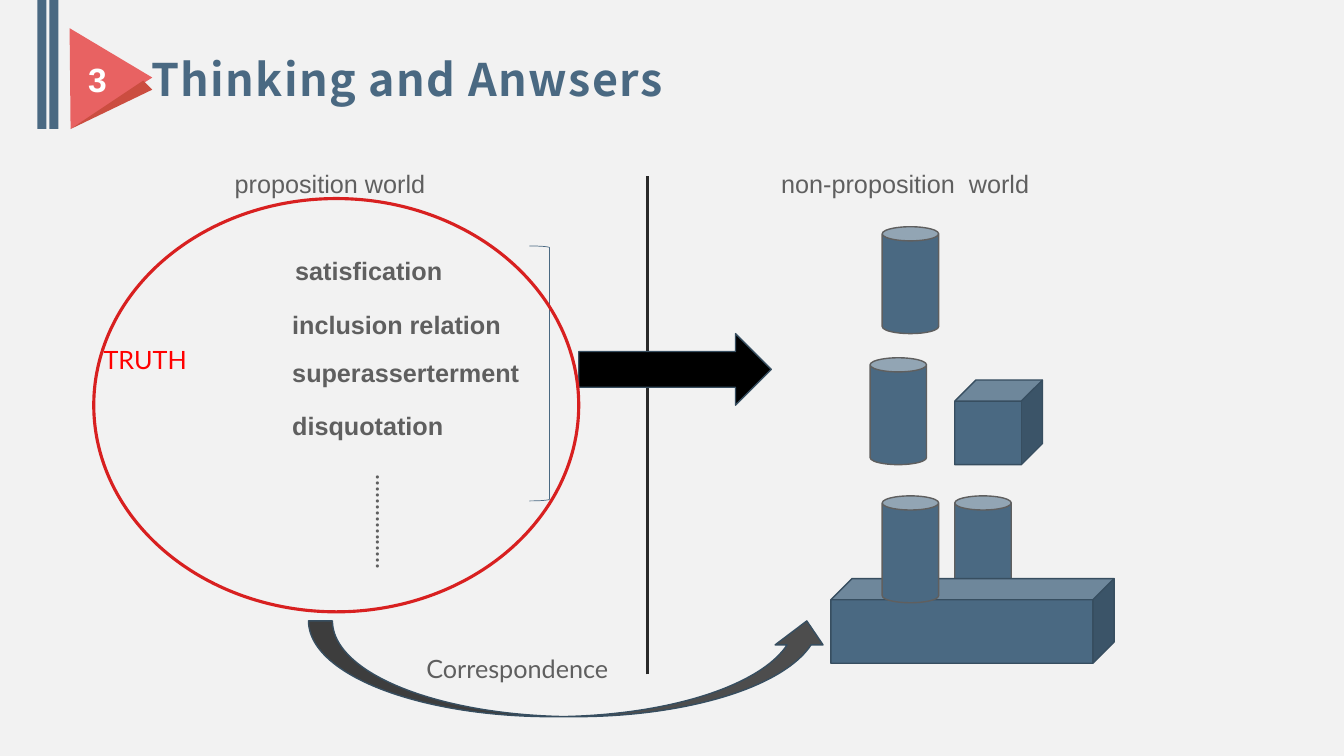
from lxml import etree
from pptx import Presentation
from pptx.dml.color import RGBColor
from pptx.enum.shapes import MSO_CONNECTOR, MSO_SHAPE as SHAPE
from pptx.enum.text import MSO_ANCHOR, MSO_AUTO_SIZE, PP_ALIGN
from pptx.oxml.ns import qn
from pptx.util import Inches, Pt

COLORS = {
    "paper": "F2F2F2", "steel": "4A6982", "edge": "374E60", "gray": "5F5F5F",
    "coral": "E86262", "brick": "CB4D40", "white": "FFFFFF", "black": "000000",
    "red": "FF0000", "ring": "D82020", "divider": "292929", "curve": "4D4D4D",
}
TITLE = "Thinking and Anwsers"
NUMBER = "3"
HEADINGS = [("proposition world", 2.23), ("non-proposition  world", 7.65)]
THEORIES = [
    ("satisfication", 2.83, 2.48, 1.66),
    ("inclusion relation", 2.8, 3.02, 2.27),
    ("superasserterment", 2.8, 3.5, 2.45),
    ("disquotation", 2.8, 4.02, 1.7),
]
BAR_LEFTS = [0.41, 0.53, 0.37, 0.49]
FLAG = [(0.69, 0.28), (1.51, 0.77), (0.7, 1.28)]
FLAG_FOLD = [(1.42, 0.8), (1.51, 0.89), (0.7, 1.28)]
CAN_SIZE = (0.56, 1.06)
OBJECTS = [
    (SHAPE.CAN, 8.75, 2.25, *CAN_SIZE),
    (SHAPE.CAN, 8.63, 3.55, *CAN_SIZE),
    (SHAPE.CAN, 9.47, 4.92, *CAN_SIZE),
    (SHAPE.CUBE, 9.47, 3.77, 0.87, 0.84),
    (SHAPE.CUBE, 8.24, 5.74, 2.81, 0.84),
    (SHAPE.CAN, 8.75, 4.92, *CAN_SIZE),
]

prs = Presentation()
prs.slide_width, prs.slide_height = Inches(13.33), Inches(7.5)
s = prs.slides.add_slide(prs.slide_layouts[6])


def rgb(name):
    return RGBColor.from_string(COLORS[name])


s.background.fill.solid()
s.background.fill.fore_color.rgb = rgb("paper")


def paint(sp, fill=None, line=None, width=1):
    sp.shadow.inherit = False
    if fill:
        sp.fill.solid()
        sp.fill.fore_color.rgb = rgb(fill)
    else:
        sp.fill.background()
    if line:
        sp.line.color.rgb = rgb(line)
        sp.line.width = Pt(width)
    else:
        sp.line.fill.background()
    return sp


def add_shape(kind, x, y, w, h, **look):
    return paint(s.shapes.add_shape(kind, Inches(x), Inches(y), Inches(w), Inches(h)), **look)


def add_polygon(points, fill):
    corners = [(Inches(x), Inches(y)) for x, y in points]
    builder = s.shapes.build_freeform(*corners[0])
    builder.add_line_segments(corners[1:], close=True)
    return paint(builder.convert_to_shape(), fill)


def write(text, tf, size=18, font="Arial", color="gray", bold=False, spacing=None, align=None):
    p = tf.paragraphs[0]
    p.alignment = align
    r = p.add_run()
    r.text = text
    r.font.size, r.font.name, r.font.bold = Pt(size), font, bold
    r.font.color.rgb = rgb(color)
    r_pr = r.font._element
    etree.SubElement(r_pr, qn("a:ea")).set("typeface", font)
    if spacing:
        r_pr.set("spc", str(spacing * 100))


def add_text(text, x, y, w, h=0.4, wrap=True, vertical=False, **style):
    tf = s.shapes.add_textbox(Inches(x), Inches(y), Inches(w), Inches(h)).text_frame
    tf.word_wrap = wrap
    tf.auto_size = MSO_AUTO_SIZE.SHAPE_TO_FIT_TEXT
    if vertical:
        tf._txBody.bodyPr.set("vert", "eaVert")
    write(text, tf, **style)


for left in BAR_LEFTS:
    add_shape(SHAPE.RECTANGLE, left, 0, 0.05, 1.28, fill="steel")

tf = add_polygon(FLAG, "coral").text_frame
tf.vertical_anchor = MSO_ANCHOR.MIDDLE
tf.margin_left, tf.margin_right = Inches(0.04), Inches(0.31)
tf.margin_top = tf.margin_bottom = 0
write(NUMBER, tf, size=24, color="white", bold=True, align=PP_ALIGN.CENTER)
add_polygon(FLAG_FOLD, "brick")
add_text(TITLE, 1.4, 0.46, 5.52, 0.64, wrap=False, size=32,
         font="Noto Sans CJK SC", color="steel", bold=True, spacing=1)

divider = s.shapes.add_connector(
    MSO_CONNECTOR.STRAIGHT, Inches(6.42), Inches(6.69), Inches(6.42), Inches(1.75))
divider.line.color.rgb = rgb("divider")
divider.line.width = Pt(2)
etree.SubElement(divider._element.spPr, qn("a:effectLst"))

for heading, left in HEADINGS:
    add_text(heading, left, 1.62, 3.4)
add_text("TRUTH", 0.93, 3.37, 1.64, font="Lato", color="red")
for theory, x, y, w in THEORIES:
    add_text(theory, x, y, w, wrap=False, bold=True)
add_text("................", 3.53, 4.61, 0.5, 2.11, vertical=True, font="Lato")

add_shape(SHAPE.RIGHT_BRACKET, 5.25, 2.44, 0.2, 2.53, line="steel", width=0.5)
add_shape(SHAPE.RIGHT_ARROW, 5.74, 3.31, 1.91, 0.71, fill="black", line="edge")
for kind, x, y, w, h in OBJECTS:
    outline = "gray" if kind == SHAPE.CAN else "edge"
    add_shape(kind, x, y, w, h, fill="steel", line=outline)
add_shape(SHAPE.CURVED_UP_ARROW, 3.06, 6.16, 5.18, 0.95, fill="curve", line="edge")
add_text("Correspondence", 4.13, 6.43, 2.79, wrap=False, font="Lato")
add_shape(SHAPE.OVAL, 0.93, 1.97, 4.81, 4.1, line="ring", width=2.25)

prs.save("out.pptx")
